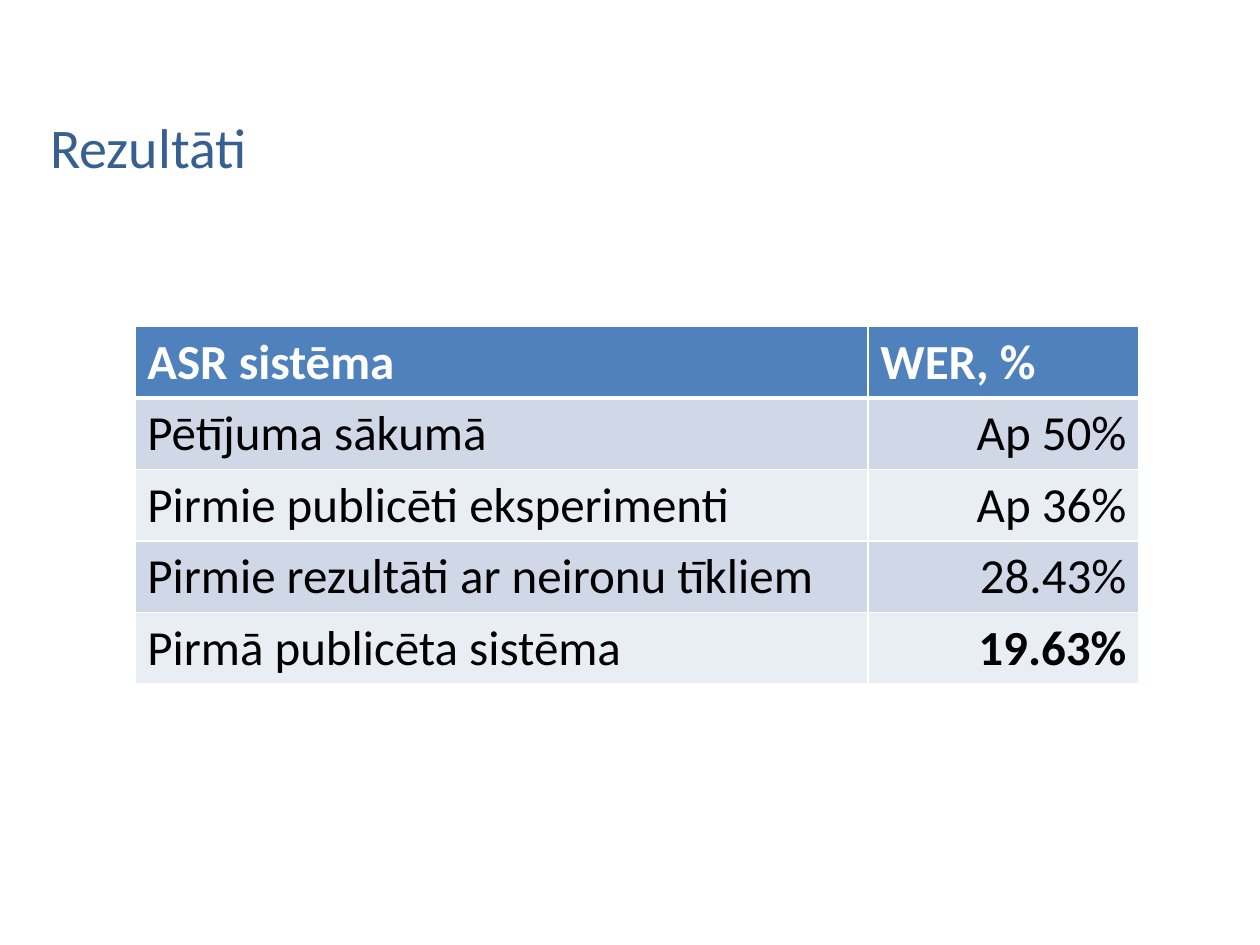
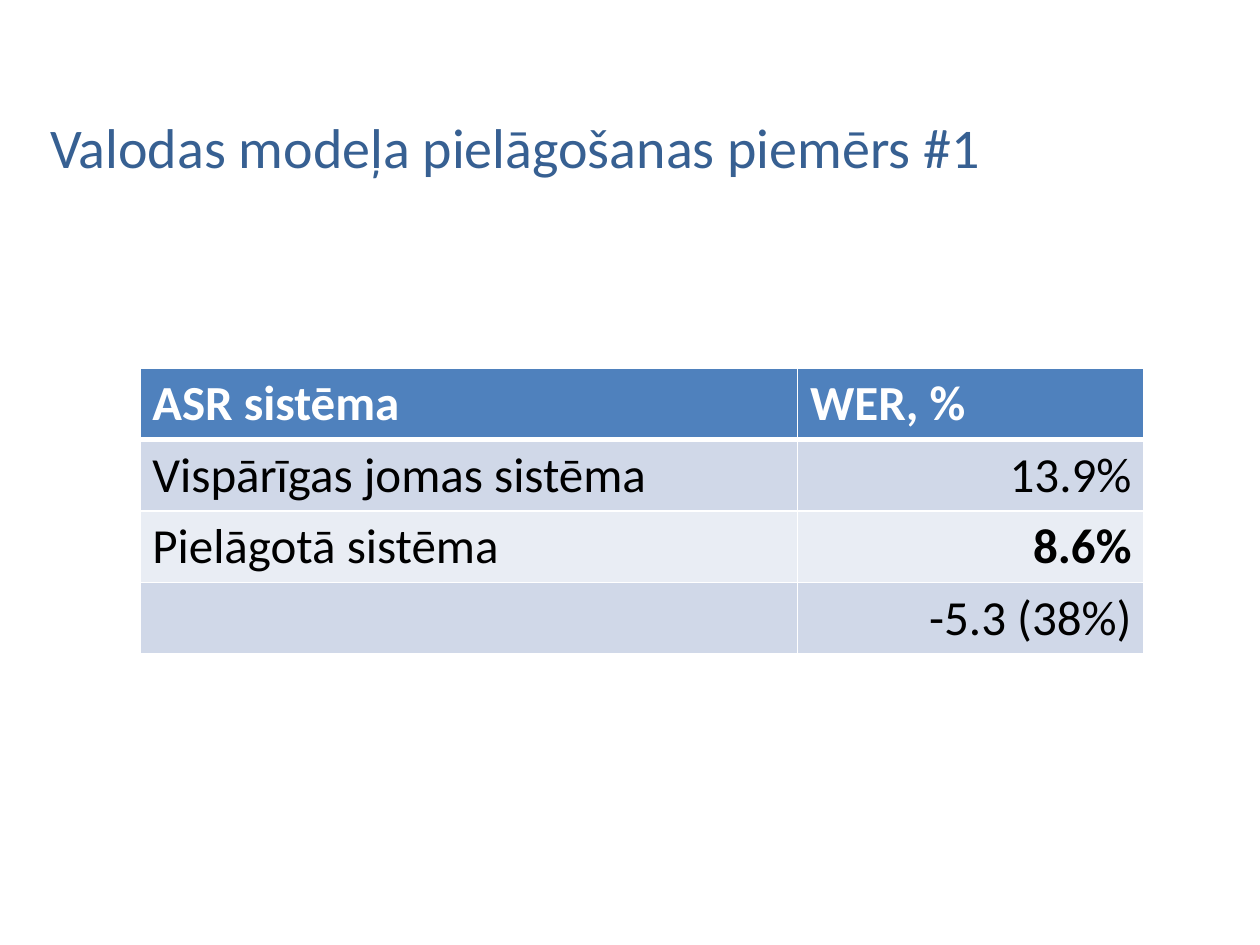
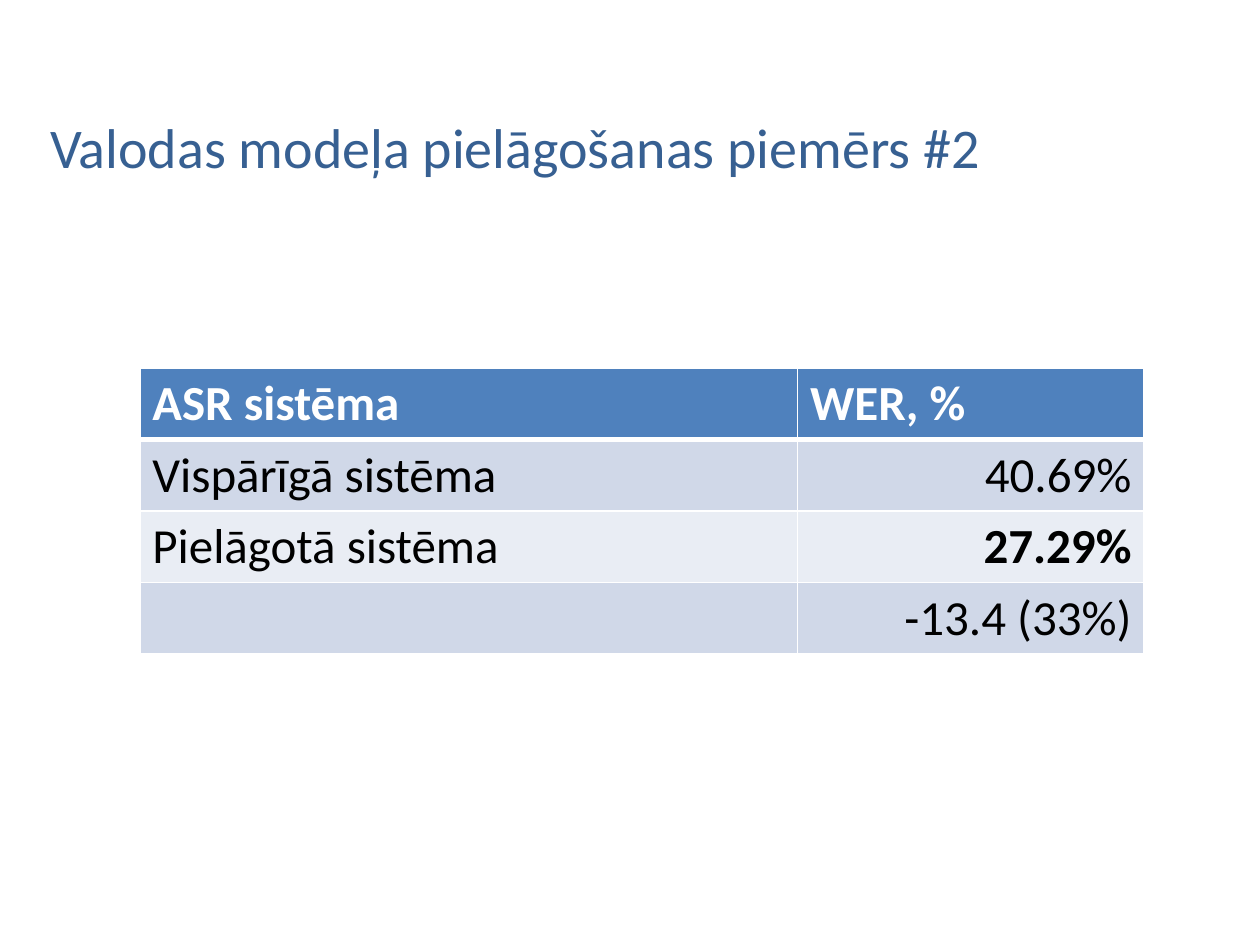
import pptx
import pptx.util
import pptx.dml.color
import pptx.enum.text
import pptx.oxml.ns
import lxml.etree

COLOURS = {
    "title": "376092",
    "header": "4F81BD",
    "odd row": "D0D8E8",
    "even row": "E9EDF4",
    "rule": "FFFFFF",
    "header text": "FFFFFF",
    "body text": "000000",
}
FONT = "Calibri"
TITLE_SIZE, TABLE_SIZE = 32, 28
SLIDE_W, SLIDE_H = pptx.util.Inches(10), pptx.util.Inches(7.5)
TABLE_W = pptx.util.Inches(7.97)
ROW_H = pptx.util.Inches(0.567)
HEADINGS = ("ASR sistēma", "WER, %")


def add_run(paragraph, text, size, colour, bold=False):
    run = paragraph.add_run()
    run.text = text
    run.font.name = FONT
    run.font.size = pptx.util.Pt(size)
    run.font.bold = bold
    run.font.color.rgb = pptx.dml.color.RGBColor.from_string(COLOURS[colour])


def rule_cell(cell, top, bottom):
    """Draw the four borders of a cell; top and bottom are widths in points."""
    properties = cell._tc.get_or_add_tcPr()
    widths = {"a:lnL": 1, "a:lnR": 1, "a:lnT": top, "a:lnB": bottom}
    for position, (side, width) in enumerate(widths.items()):
        line = lxml.etree.Element(pptx.oxml.ns.qn(side), w=str(pptx.util.Pt(width)))
        fill = lxml.etree.SubElement(line, pptx.oxml.ns.qn("a:solidFill"))
        lxml.etree.SubElement(fill, pptx.oxml.ns.qn("a:srgbClr"), val=COLOURS["rule"])
        properties.insert(position, line)


# Title, title box height, table left and top, share of the first column,
# measured systems, row whose result is the best
RESULTS = [
    ("Rezultāti", 1.63, 1.07, 2.59, 0.73, [
        ("Pētījuma sākumā", "Ap 50%"),
        ("Pirmie publicēti eksperimenti", "Ap 36%"),
        ("Pirmie rezultāti ar neironu tīkliem", "28.43%"),
        ("Pirmā publicēta sistēma", "19.63%"),
    ], 4),
    ("Valodas modeļa pielāgošanas piemērs #1", 0.83, 1.11, 2.92, 0.655, [
        ("Vispārīgas jomas sistēma", "13.9%"),
        ("Pielāgotā sistēma", "8.6%"),
        ("", "-5.3 (38%)"),
    ], 2),
    ("Valodas modeļa pielāgošanas piemērs #2", 0.83, 1.11, 2.92, 0.655, [
        ("Vispārīgā sistēma", "40.69%"),
        ("Pielāgotā sistēma", "27.29%"),
        ("", "-13.4 (33%)"),
    ], 2),
]

deck = pptx.Presentation()
deck.slide_width, deck.slide_height = SLIDE_W, SLIDE_H

for title, title_height, left, top, system_share, systems, best_row in RESULTS:
    slide = deck.slides.add_slide(deck.slide_layouts[6])

    heading = slide.shapes.add_textbox(
        int(SLIDE_W * 0.03), pptx.util.Inches(0.58),
        int(SLIDE_W * 0.917), pptx.util.Inches(title_height)).text_frame
    heading.word_wrap = True
    heading.paragraphs[0].line_spacing = 1.5
    add_run(heading.paragraphs[0], title, TITLE_SIZE, "title")

    rows = [HEADINGS] + systems
    error_rates = slide.shapes.add_table(
        len(rows), len(HEADINGS), pptx.util.Inches(left), pptx.util.Inches(top),
        TABLE_W, ROW_H * len(rows)).table
    error_rates.columns[0].width = int(TABLE_W * system_share)
    error_rates.columns[1].width = TABLE_W - error_rates.columns[0].width

    for r, texts in enumerate(rows):
        is_header = r == 0
        band = "header" if is_header else "odd row" if r % 2 else "even row"
        for c, text in enumerate(texts):
            cell = error_rates.cell(r, c)
            cell.fill.solid()
            cell.fill.fore_color.rgb = pptx.dml.color.RGBColor.from_string(COLOURS[band])
            rule_cell(cell, top=3 if r == 1 else 1, bottom=3 if is_header else 1)
            paragraph = cell.text_frame.paragraphs[0]
            if c == 1 and not is_header:
                paragraph.alignment = pptx.enum.text.PP_ALIGN.RIGHT
            if text:
                add_run(paragraph, text, TABLE_SIZE,
                        "header text" if is_header else "body text",
                        bold=is_header or (c == 1 and r == best_row))

deck.save("out.pptx")
